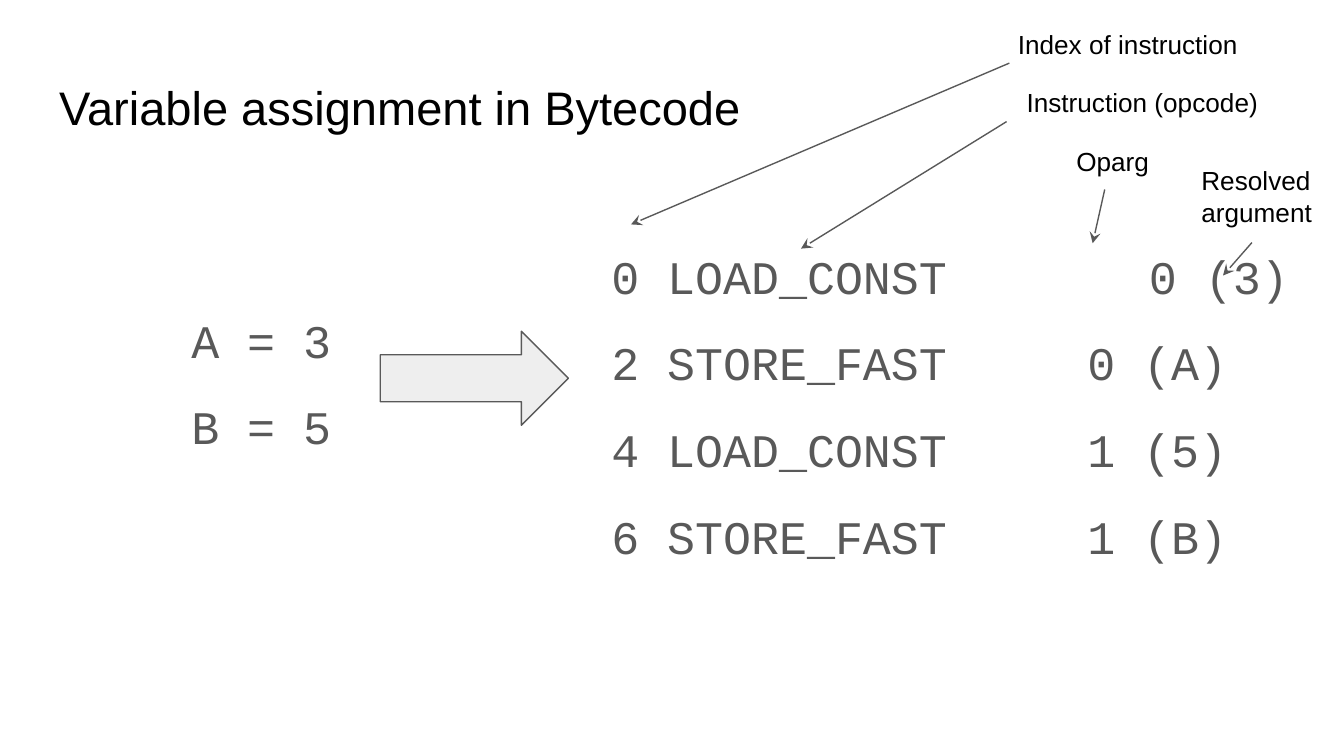
from dataclasses import dataclass

import lxml.etree
import pptx
import pptx.dml.color
import pptx.enum.shapes
import pptx.enum.text
import pptx.oxml.ns
import pptx.util


@dataclass(frozen=True)
class Theme:
    black: str = "000000"
    gray: str = "595959"
    pale: str = "EEEEEE"
    sans: str = "Arial"
    mono: str = "Courier New"
    title_size: float = 25.2
    code_size: float = 25
    label_size: float = 14
    line_width: float = 0.75


@dataclass(frozen=True)
class Box:
    """A region in grid units: 100 columns across the slide."""
    left: float
    top: float
    width: float
    height: float

    def place(self):
        return [grid(n) for n in (self.left, self.top, self.width, self.height)]


THEME = Theme()
COLUMNS, ROWS = 100, 56.25
UNIT = pptx.util.Inches(10) / COLUMNS
CHARACTER = 0.6 * THEME.code_size  # monospaced advance, in points


def grid(units):
    return round(units * UNIT)


def color(value):
    return pptx.dml.color.RGBColor.from_string(value)


def style_line(line):
    line.color.rgb = color(THEME.gray)
    line.width = pptx.util.Pt(THEME.line_width)


def fill_text(shape, text, font, size, tint):
    frame = shape.text_frame
    frame.text = text
    frame.word_wrap = True
    frame.auto_size = pptx.enum.text.MSO_AUTO_SIZE.NONE
    frame.vertical_anchor = pptx.enum.text.MSO_ANCHOR.TOP
    frame.margin_left = frame.margin_right = grid(1)
    frame.margin_top = frame.margin_bottom = grid(1)
    for para in frame.paragraphs:
        para.alignment = pptx.enum.text.PP_ALIGN.LEFT
        for span in para.runs:
            span.font.name = font
            span.font.size = pptx.util.Pt(size)
            span.font.color.rgb = color(tint)
    return frame


def add_title(page, box, text):
    title = page.shapes.title
    title.left, title.top, title.width, title.height = box.place()
    fill_text(title, text, THEME.sans, THEME.title_size, THEME.black)


def add_tab_stop(para, position):
    properties = para._p.get_or_add_pPr()
    stops = lxml.etree.SubElement(properties, pptx.oxml.ns.qn("a:tabLst"))
    lxml.etree.SubElement(stops, pptx.oxml.ns.qn("a:tab"),
                          pos=str(int(position)), algn="l")


def add_code(page, box, lines, stops=()):
    """Stops give each line's operand position, if it has one."""
    shape = page.shapes.add_textbox(*box.place())
    frame = fill_text(shape, "\n".join(lines), THEME.mono,
                      THEME.code_size, THEME.gray)
    for para in frame.paragraphs:
        para.line_spacing = 1.15
    for para in frame.paragraphs[1:]:
        para.space_before = pptx.util.Pt(12)
    for para, stop in zip(frame.paragraphs, stops):
        add_tab_stop(para, stop)


def add_block_arrow(page, box):
    arrow = page.shapes.add_shape(
        pptx.enum.shapes.MSO_SHAPE.RIGHT_ARROW, *box.place())
    arrow.shadow.inherit = False
    arrow.fill.solid()
    arrow.fill.fore_color.rgb = color(THEME.pale)
    style_line(arrow.line)


def add_annotation(page, box, text, tip, tail):
    """Label with a pointer; tip and tail are offsets from the box corner."""
    label = page.shapes.add_textbox(*box.place())
    fill_text(label, text, THEME.sans, THEME.label_size, THEME.black)
    ends = [grid(corner + offset) for point in (tip, tail)
            for corner, offset in zip((box.left, box.top), point)]
    pointer = page.shapes.add_connector(
        pptx.enum.shapes.MSO_CONNECTOR.STRAIGHT, *ends)
    style_line(pointer.line)
    properties = pointer._element.spPr
    lxml.etree.SubElement(properties.get_or_add_ln(),
                          pptx.oxml.ns.qn("a:headEnd"), type="stealth")
    lxml.etree.SubElement(properties, pptx.oxml.ns.qn("a:effectLst"))


def build_bytecode_slide(deck):
    page = deck.slides.add_slide(deck.slide_layouts[5])
    add_title(page, Box(3.4, 4.87, 93.2, 6.3), "Variable assignment in Bytecode")
    add_code(page, Box(13.25, 21.55, 19.1, 16.7), ["A = 3", "B = 5"])
    add_block_arrow(page, Box(28.3, 24.65, 14, 7))
    bytecode = ["0 LOAD_CONST\t0 (3)", "2 STORE_FAST\t0 (A)",
                "4 LOAD_CONST\t1 (5)", "6 STORE_FAST\t1 (B)"]
    operand = pptx.util.Pt(17 * CHARACTER)
    add_code(page, Box(44.5, 16.8, 53.6, 16.7), bytecode,
             [grid(40)] + [operand] * 3)
    annotations = [
        (Box(74.75, 1.1, 23.3, 4.4), "Index of instruction",
         (-27.8, 15.6), (0.35, 3.6)),
        (Box(75.4, 5.45, 23.3, 4.4), "Instruction (opcode)",
         (-15.8, 13.05), (-0.5, 3.6)),
        (Box(79.1, 9.8, 23.3, 4.4), "Oparg", (2.2, 8.3), (3.1, 4.3)),
        (Box(88.4, 11.25, 18.5, 6.7), "Resolved argument",
         (2.6, 9.25), (4.75, 6.8)),
    ]
    for annotation in annotations:
        add_annotation(page, *annotation)


def main():
    deck = pptx.Presentation()
    deck.slide_width, deck.slide_height = grid(COLUMNS), grid(ROWS)
    build_bytecode_slide(deck)
    deck.save("out.pptx")


if __name__ == "__main__":
    main()
